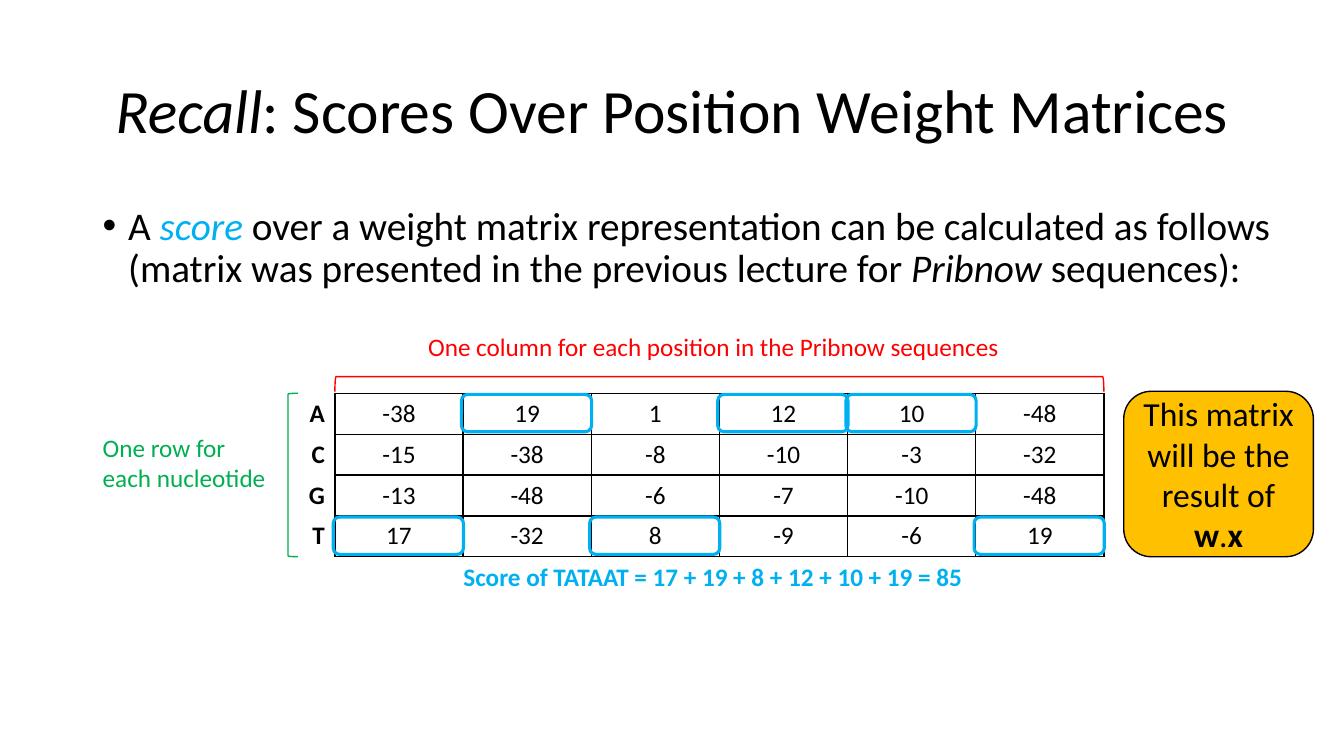
from lxml.etree import SubElement
from pptx import Presentation
from pptx.dml.color import RGBColor
from pptx.enum.shapes import MSO_SHAPE
from pptx.enum.text import MSO_ANCHOR, PP_ALIGN
from pptx.oxml.ns import qn
from pptx.util import Cm, Pt

COLOURS = {"black": "000000", "blue": "00B0F0", "red": "FF0000",
           "green": "00B050", "gold": "FFC000"}

TITLE = [[("Recall", {"italic": True}), (": Scores Over Position Weight Matrices", {})]]
BODY = [[
    ("A ", {}),
    ("score", {"italic": True, "colour": "blue"}),
    (" over a weight matrix representation can be calculated as follows "
     "(matrix was presented in the previous lecture for ", {}),
    ("Pribnow ", {"italic": True}),
    ("sequences):", {}),
]]
COLUMN_NOTE = [[("One column for each position in the Pribnow sequences", {"colour": "red"})]]
ROW_NOTE = [[(line, {"colour": "green"})] for line in ("One row for", "each nucleotide")]
SCORE = [[("Score of TATAAT = 17 + 19 + 8 + 12 + 10 + 19 = 85",
           {"colour": "blue", "bold": True})]]
CALLOUT = [[("This matrix will be the result of ", {}), ("w", {"bold": True}),
            (".", {}), ("x", {"bold": True})]]

SEQUENCE = "TATAAT"
WEIGHTS = {
    "A": [-38, 19, 1, 12, 10, -48],
    "C": [-15, -38, -8, -10, -3, -32],
    "G": [-13, -48, -6, -7, -10, -48],
    "T": [17, -32, 8, -9, -6, 19],
}

TABLE_LEFT, TABLE_TOP = 5.21, 9.91
COLUMN, ROW = 3.23, 1.03
GRID_LEFT = TABLE_LEFT + COLUMN
GRID_WIDTH = COLUMN * len(SEQUENCE)
GRID_HEIGHT = ROW * len(WEIGHTS)
BRACKET_DEPTH, BRACKET_MIDDLE = 0.38, 9.68


def write(frame, paragraphs, size, para_format={}):
    for index, spans in enumerate(paragraphs):
        para = frame.paragraphs[0] if index == 0 else frame.add_paragraph()
        for name, value in para_format.items():
            setattr(para, name, value)
        for text, style in spans:
            span = para.add_run()
            span.text = text
            font_format = {"name": "Calibri", "size": Pt(size), **style}
            colour = font_format.pop("colour", "black")
            for name, value in font_format.items():
                setattr(span.font, name, value)
            span.font.color.rgb = RGBColor.from_string(COLOURS[colour])


def add_text(page, place, paragraphs, size, para_format={}, **frame_format):
    box = page.shapes.add_textbox(*map(Cm, place))
    for name, value in {"word_wrap": True, **frame_format}.items():
        setattr(box.text_frame, name, value)
    write(box.text_frame, paragraphs, size, para_format)
    return box


def add_outline(page, kind, place, colour, width=1, fill=None):
    shape = page.shapes.add_shape(kind, *map(Cm, place))
    shape.shadow.inherit = False
    shape.line.color.rgb = RGBColor.from_string(COLOURS[colour])
    shape.line.width = Pt(width)
    if fill:
        shape.fill.solid()
        shape.fill.fore_color.rgb = RGBColor.from_string(COLOURS[fill])
    else:
        shape.fill.background()
    return shape


def set_borders(cell, sides):
    properties = cell._tc.get_or_add_tcPr()
    for position, side in enumerate("LRTB"):
        line = SubElement(properties, qn(f"a:ln{side}"), w=str(Pt(1)))
        properties.remove(line)
        properties.insert(position, line)
        if side in sides:
            fill = SubElement(line, qn("a:solidFill"))
            SubElement(fill, qn("a:srgbClr"), val=COLOURS["black"])
        else:
            SubElement(line, qn("a:noFill"))


def add_bullet(para, indent):
    properties = para._p.get_or_add_pPr()
    properties.set("marL", str(Cm(indent)))
    properties.set("indent", str(-Cm(indent)))
    SubElement(properties, qn("a:buFont"), typeface="Arial")
    SubElement(properties, qn("a:buChar"), char="•")


def add_weights(page):
    place = (TABLE_LEFT, TABLE_TOP, COLUMN + GRID_WIDTH, GRID_HEIGHT)
    table = page.shapes.add_table(len(WEIGHTS), len(SEQUENCE) + 1, *map(Cm, place)).table
    table.first_row = table.horz_banding = False
    for column in table.columns:
        column.width = Cm(COLUMN)
    for r, (nucleotide, weights) in enumerate(WEIGHTS.items()):
        table.rows[r].height = Cm(ROW)
        for c, value in enumerate([nucleotide, *weights]):
            cell = table.cell(r, c)
            cell.fill.background()
            is_label = c == 0
            set_borders(cell, "R" if is_label else "LRTB")
            alignment = PP_ALIGN.RIGHT if is_label else PP_ALIGN.CENTER
            write(cell.text_frame, [[(str(value), {"bold": is_label})]], 18,
                  {"alignment": alignment})


def add_highlights(page):
    for position, nucleotide in enumerate(SEQUENCE):
        row = list(WEIGHTS).index(nucleotide)
        place = (GRID_LEFT - 0.04 + position * COLUMN, TABLE_TOP + 0.03 + row * ROW,
                 COLUMN + 0.05, 0.94)
        add_outline(page, MSO_SHAPE.ROUNDED_RECTANGLE, place, "blue", 2.25)


def main():
    deck = Presentation()
    deck.slide_width, deck.slide_height = Cm(33.87), Cm(19.05)
    page = deck.slides.add_slide(deck.slide_layouts[6])

    add_text(page, (2.34, 1.02, 29.21, 3.68), TITLE, 44,
             {"alignment": PP_ALIGN.CENTER, "line_spacing": 0.9},
             vertical_anchor=MSO_ANCHOR.MIDDLE)
    body = add_text(page, (2.34, 5.08, 30.43, 12.09), BODY, 28,
                    {"line_spacing": 0.9, "space_before": Pt(10)})
    add_bullet(body.text_frame.paragraphs[0], 0.64)

    add_weights(page)
    add_text(page, (10.54, 8.23, 15.09, 1.02), COLUMN_NOTE, 18, word_wrap=False)
    bracket_left = GRID_LEFT + (GRID_WIDTH - BRACKET_DEPTH) / 2
    bracket_top = BRACKET_MIDDLE - GRID_WIDTH / 2
    bracket = add_outline(page, MSO_SHAPE.RIGHT_BRACKET,
                          (bracket_left, bracket_top, BRACKET_DEPTH, GRID_WIDTH), "red")
    bracket.rotation = 270
    add_text(page, (2.34, 10.77, 4.83, 1.8), ROW_NOTE, 18, word_wrap=False)
    add_outline(page, MSO_SHAPE.LEFT_BRACKET, (7.26, TABLE_TOP, 0.25, GRID_HEIGHT), "green")
    add_text(page, (11.43, 14.02, 13.28, 1.02), SCORE, 18, word_wrap=False)
    add_highlights(page)

    callout = add_outline(page, MSO_SHAPE.ROUNDED_RECTANGLE,
                          (28.32, 9.86, 4.78, 4.17), "black", fill="gold")
    callout.text_frame.vertical_anchor = MSO_ANCHOR.MIDDLE
    callout.text_frame.word_wrap = True
    write(callout.text_frame, CALLOUT, 24, {"alignment": PP_ALIGN.CENTER})
    deck.save("out.pptx")


if __name__ == "__main__":
    main()
